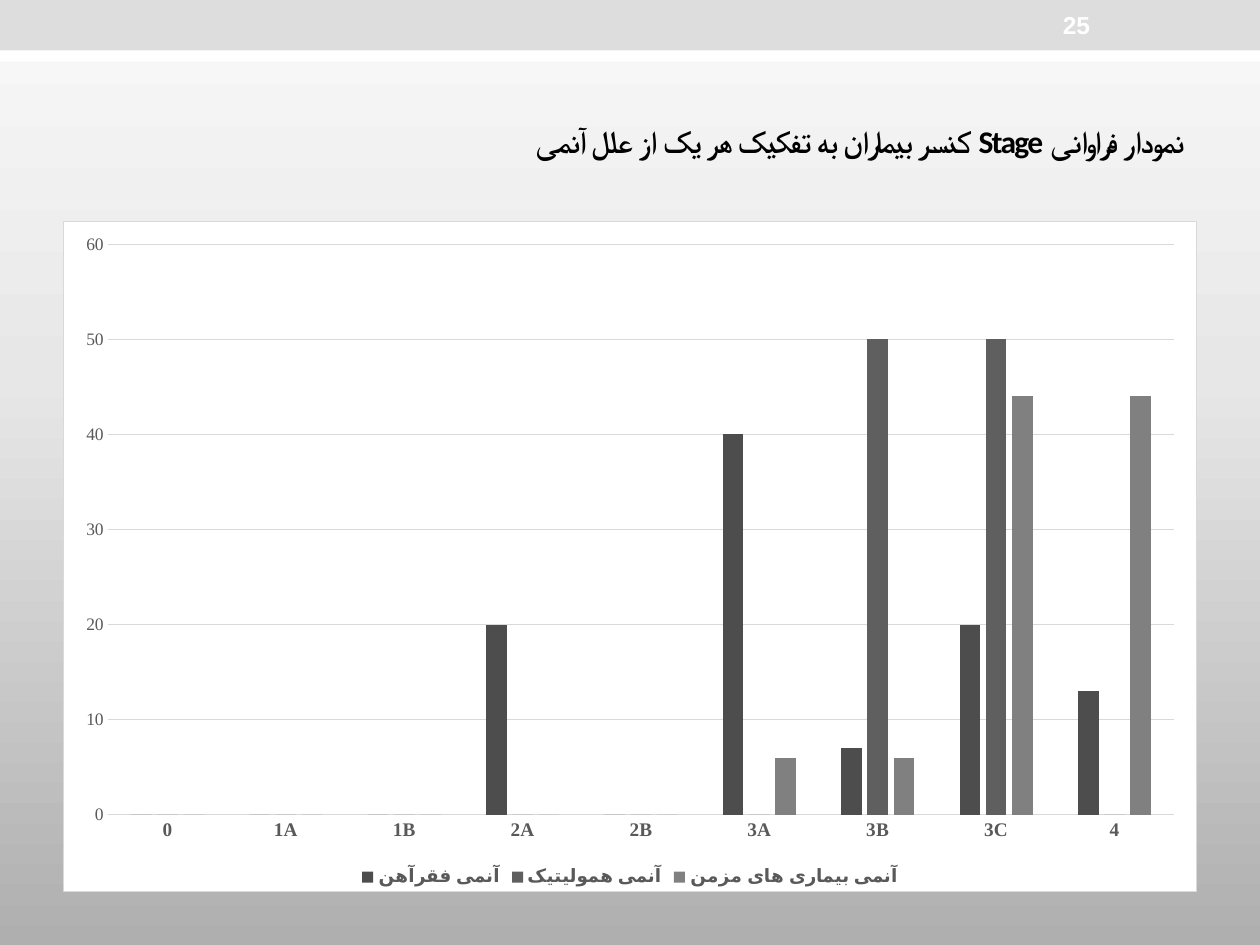
from copy import deepcopy

from lxml.etree import SubElement
from pptx import Presentation
from pptx.chart.data import CategoryChartData
from pptx.dml.color import RGBColor
from pptx.enum.chart import XL_CHART_TYPE, XL_LEGEND_POSITION, XL_TICK_MARK
from pptx.enum.shapes import MSO_SHAPE
from pptx.enum.text import MSO_ANCHOR, PP_ALIGN
from pptx.oxml import parse_xml
from pptx.oxml.ns import nsdecls, qn
from pptx.util import Inches, Pt

WIDE, HIGH = 10, 7.5
MARGIN = 0.05 * WIDE
COLORS = {
    "white": "FFFFFF", "black": "000000", "band": "DDDDDD",
    "label": "595959", "rule": "D9D9D9",
    "iron": "4D4D4D", "hemo": "5F5F5F", "chronic": "808080",
}
SKY = [(0, "F9F9F9"), (40, "E7E7E7"), (100, "AFAFAF")]
STAGES = ["0", "1A", "1B", "2A", "2B", "3A", "3B", "3C", "4"]
CAUSES = [
    ("آنمی فقرآهن", "iron", [0, 0, 0, 20, 0, 40, 7, 20, 13]),
    ("آنمی همولیتیک", "hemo", [0, 0, 0, 0, 0, 0, 50, 50, 0]),
    ("آنمی بیماری های مزمن", "chronic", [0, 0, 0, 0, 0, 6, 6, 44, 44]),
]


def rgb(name):
    return RGBColor.from_string(COLORS[name])


def box(left, top, width, height):
    return [Inches(n) for n in (left, top, width, height)]


def style(font, size, color, face, bold=False):
    font.size, font.name, font.bold = Pt(size), face, bold
    font.color.rgb = rgb(color)


def add_sky(slide):
    """Fill the background with the vertical gradient in SKY."""
    fill = slide.background.fill
    fill.gradient()
    fill.gradient_angle = 270
    stops = fill.gradient_stops
    first = slide.background._cSld.find(".//" + qn("a:gs"))
    first.getparent().append(deepcopy(first))
    stops = fill.gradient_stops
    for stop, (share, color) in zip(stops, SKY):
        stop.position = share / 100
        stop.color.rgb = RGBColor.from_string(color)


def add_band(slide, top, height, color):
    band = slide.shapes.add_shape(MSO_SHAPE.RECTANGLE, *box(0, top, WIDE, height))
    band.shadow.inherit = False
    band.fill.solid()
    band.fill.fore_color.rgb = rgb(color)
    band.line.fill.background()


def add_text(slide, text, place, *, size, color, face, rtl=False, gap=0):
    """Add bold right-aligned text; gap is letter spacing in points."""
    frame = slide.shapes.add_textbox(*box(*place)).text_frame
    frame.word_wrap = True
    frame.vertical_anchor = MSO_ANCHOR.MIDDLE
    para = frame.paragraphs[0]
    para.alignment = PP_ALIGN.RIGHT
    if rtl:
        para._p.get_or_add_pPr().set("rtl", "1")
    run = para.add_run()
    run.text = text
    style(run.font, size, color, face, True)
    if gap:
        run.font._element.set("spc", str(gap * 100))


def rule(line):
    line.color.rgb = rgb("rule")
    line.width = Pt(0.75)


def frame_chart(chart):
    """Give the chart area a white fill and a thin border."""
    area = parse_xml(f"<c:spPr {nsdecls('c', 'a')}/>")
    for parent in (area, SubElement(area, qn("a:ln"), w=str(Pt(0.75)))):
        color = "white" if parent is area else "rule"
        solid = SubElement(parent, qn("a:solidFill"))
        SubElement(solid, qn("a:srgbClr"), val=COLORS[color])
    area.insert(0, area.findall(qn("a:solidFill"))[0])
    chart._chartSpace.find(qn("c:chart")).addnext(area)


def set_axis(axis, size, bold):
    axis.major_tick_mark = axis.minor_tick_mark = XL_TICK_MARK.NONE
    style(axis.tick_labels.font, size, "label", "Times New Roman", bold)


def add_bars(slide, place):
    data = CategoryChartData()
    data.categories = STAGES
    for name, _, values in CAUSES:
        data.add_series(name, values)
    chart = slide.shapes.add_chart(
        XL_CHART_TYPE.COLUMN_CLUSTERED, *box(*place), data).chart
    style(chart.font, 10, "black", "Arial")
    frame_chart(chart)
    chart.has_title = False
    chart.has_legend = True
    chart.legend.position = XL_LEGEND_POSITION.BOTTOM
    chart.legend.include_in_layout = False
    style(chart.legend.font, 10.5, "label", "Arial", True)

    set_axis(chart.category_axis, 11, True)
    rule(chart.category_axis.format.line)
    scale = chart.value_axis
    set_axis(scale, 10, False)
    scale.minimum_scale, scale.maximum_scale, scale.major_unit = 0, 60, 10
    scale.format.line.fill.background()
    rule(scale.major_gridlines.format.line)

    plot = chart.plots[0]
    plot.gap_width, plot.overlap, plot.vary_by_categories = 219, -27, False
    for bars, (_, color, _) in zip(plot.series, CAUSES):
        bars.format.fill.solid()
        bars.format.fill.fore_color.rgb = rgb(color)


def main():
    deck = Presentation()
    deck.slide_width, deck.slide_height = Inches(WIDE), Inches(HIGH)
    slide = deck.slides.add_slide(deck.slide_layouts[6])
    inner = WIDE - 2 * MARGIN
    add_sky(slide)
    add_band(slide, 0.24, 0.25, "white")
    add_band(slide, 0, 0.4, "band")
    add_text(slide, "25", (7.75, 0, 1, 0.4),
             size=14, color="white", face="Arial")
    add_text(slide, "نمودار فراوانی Stage کنسر بیماران به تفکیک هر یک از علل آنمی",
             (MARGIN, 0.58, inner, 1.08), size=18, color="black",
             face="Calibri", rtl=True, gap=-1)
    add_bars(slide, (MARGIN, 1.75, inner, 5.33))
    deck.save("out.pptx")


if __name__ == "__main__":
    main()
